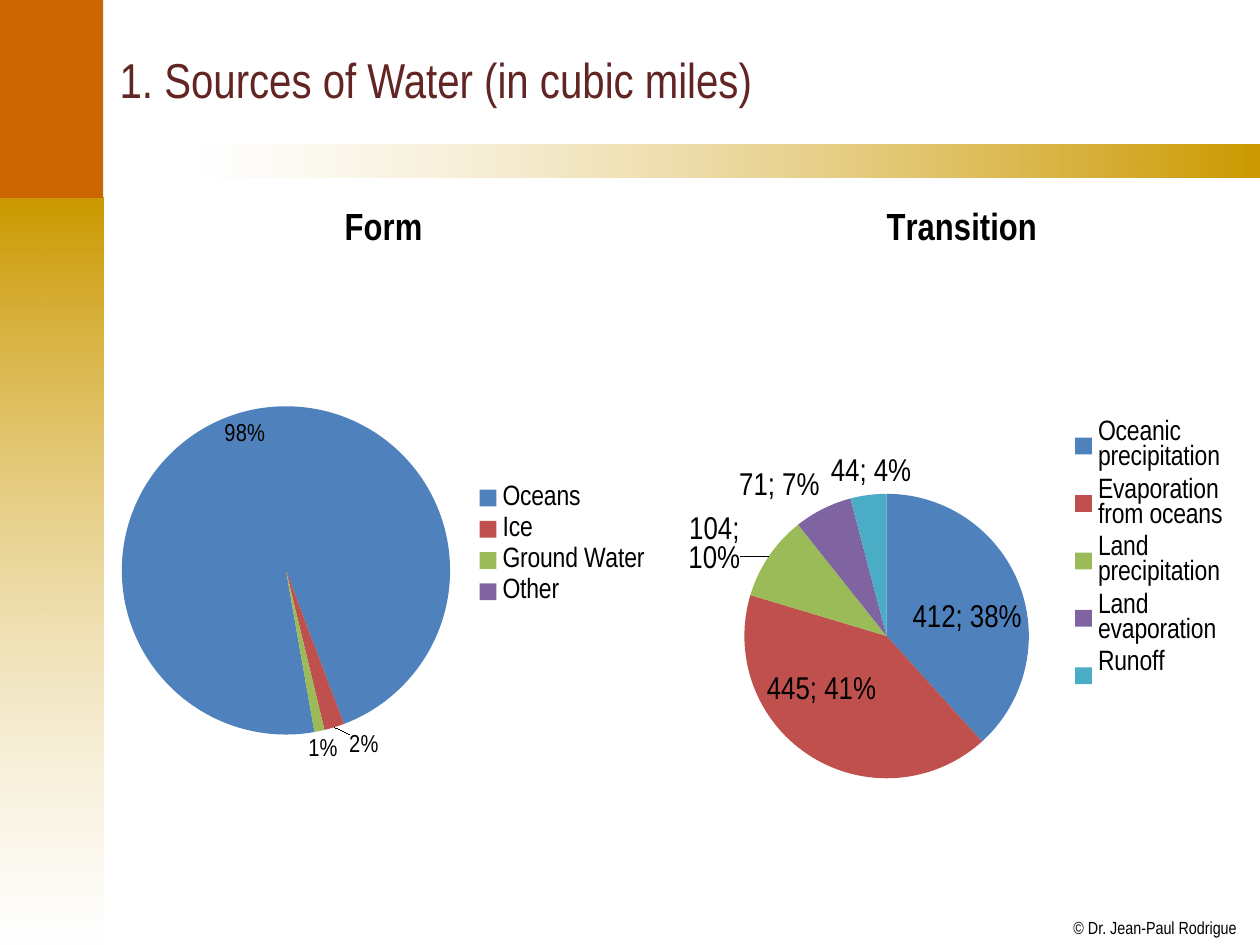
from lxml import etree
from pptx import Presentation
from pptx import util as u
from pptx.chart.data import CategoryChartData
from pptx.dml.color import RGBColor
from pptx.enum import chart as charts, shapes, text
from pptx.oxml.ns import qn

FONT = "Arial Narrow"
COLORS = {"orange": "CC6600", "gold": "CC9900", "white": "FFFFFF",
          "title": "632523", "black": "000000"}
SLICES = ["4F81BD", "C0504D", "9BBB59", "8064A2", "4BACC6"]
WIDTH, HEIGHT = u.Inches(10), u.Inches(7.5)


def rgb(name):
    return RGBColor.from_string(COLORS[name])


def inches(box):
    return [u.Inches(length) for length in box]


def style_font(font, size, color="black", bold=None):
    font.name = FONT
    font.size = u.Pt(size)
    font.color.rgb = rgb(color)
    font.bold = bold


def add_band(slide, box):
    band = slide.shapes.add_shape(shapes.MSO_SHAPE.RECTANGLE, *inches(box))
    band.shadow.inherit = False
    band.line.fill.background()
    return band


def add_fading_band(slide, box, ends, angle):
    band = add_band(slide, box)
    band.fill.gradient()
    band.fill.gradient_angle = angle
    for position, (stop, color) in enumerate(zip(band.fill.gradient_stops, ends)):
        stop.position = position
        stop.color.rgb = rgb(color)
    for color in band._element.spPr.iter(qn("a:srgbClr")):
        if color.get("val") == COLORS["white"]:
            etree.SubElement(color, qn("a:alpha")).set("val", "50000")


def add_frame(slide, sidebar, split):
    left, top, width, height = sidebar
    add_fading_band(slide, (left, split, width, top + height - split),
                    ("gold", "white"), 270)
    add_fading_band(slide, (1.57, 1.15, 8.43, 0.26), ("white", "gold"), 0)
    corner = add_band(slide, (left, top, width, split - top))
    corner.fill.solid()
    corner.fill.fore_color.rgb = rgb("orange")


def add_title(slide, box, wording):
    title = slide.shapes.title
    title.left, title.top, title.width, title.height = inches(box)
    frame = title.text_frame
    frame.text = wording
    frame.auto_size = text.MSO_AUTO_SIZE.NONE
    frame.vertical_anchor = text.MSO_ANCHOR.MIDDLE
    frame.paragraphs[0].alignment = text.PP_ALIGN.LEFT
    style_font(frame.paragraphs[0].font, 28, "title")


def add_credit(slide, box, wording):
    frame = slide.shapes.add_textbox(*inches(box)).text_frame
    frame.margin_left = frame.margin_right = 0
    frame.margin_top = frame.margin_bottom = 0
    frame.word_wrap = False
    frame.text = wording
    style_font(frame.paragraphs[0].font, 10)


def place(element, index, shares, inner=False):
    for old in element.findall(qn("c:layout")):
        element.remove(old)
    layout = etree.Element(qn("c:layout"))
    manual = etree.SubElement(layout, qn("c:manualLayout"))
    settings = [("layoutTarget", "inner")] if inner else []
    settings += [("xMode", "edge"), ("yMode", "edge"), *zip("xywh", shares)]
    for tag, value in settings:
        etree.SubElement(manual, qn(f"c:{tag}")).set("val", str(value))
    element.insert(index, layout)


def add_pie(slide, box, name, sources, pie_area, legend_area,
            start=0, label_size=18, percent_values=False):
    data = CategoryChartData()
    data.categories = list(sources)
    data.add_series(name, list(sources.values()))
    chart = slide.shapes.add_chart(charts.XL_CHART_TYPE.PIE, *inches(box), data).chart
    style_font(chart.font, 18)

    chart.has_title = True
    chart.chart_title.include_in_layout = False
    heading = chart.chart_title.text_frame
    heading.text = name
    style_font(heading.paragraphs[0].font, 21.6, bold=True)

    chart.has_legend = True
    legend = chart.legend
    legend.position = charts.XL_LEGEND_POSITION.RIGHT
    legend.include_in_layout = False
    style_font(legend.font, 16)
    place(legend._element, 1, legend_area)

    plot = chart.plots[0]
    plot.vary_by_categories = True
    for index, color in enumerate(SLICES[:len(sources)]):
        fill = plot.series[0].points[index].format.fill
        fill.solid()
        fill.fore_color.rgb = RGBColor.from_string(color)

    plot.has_data_labels = True
    labels = plot.data_labels
    style_font(labels.font, label_size)
    labels.show_value = True
    labels.show_percentage = not percent_values
    if percent_values:
        labels.number_format = '0"%"'
        labels.number_format_is_linked = False
    labels.position = charts.XL_LABEL_POSITION.BEST_FIT

    pie = plot._element
    for old in pie.findall(qn("c:firstSliceAng")):
        pie.remove(old)
    etree.SubElement(pie, qn("c:firstSliceAng")).set("val", str(start))
    place(pie.getparent(), 0, pie_area, inner=True)


def main():
    deck = Presentation()
    deck.slide_width, deck.slide_height = WIDTH, HEIGHT
    slide = deck.slides.add_slide(deck.slide_layouts[5])
    add_frame(slide, (-0.01, -0.01, 0.83, 7.51), 1.57)
    add_credit(slide, (8.52, 7.28, 1.3, 0.17), "© Dr. Jean-Paul Rodrigue")
    add_title(slide, (0.85, 0.11, 8.98, 1.04), "1. Sources of Water (in cubic miles)")
    add_pie(slide, (0.83, 1.43, 4.43, 5.79), "Form",
            {"Oceans": 98, "Ice": 2, "Ground Water": 1, "Other": 0},
            (0.03, 0.31, 0.59, 0.45), (0.66, 0.41, 0.32, 0.18),
            start=170, label_size=14, percent_values=True)
    add_pie(slide, (5.42, 1.43, 4.43, 5.79), "Transition",
            {"Oceanic precipitation": 412, "Evaporation from oceans": 445,
             "Land precipitation": 104, "Land evaporation": 71, "Runoff": 44},
            (0.11, 0.43, 0.51, 0.39), (0.69, 0.32, 0.29, 0.37))
    deck.save("out.pptx")


if __name__ == "__main__":
    main()
